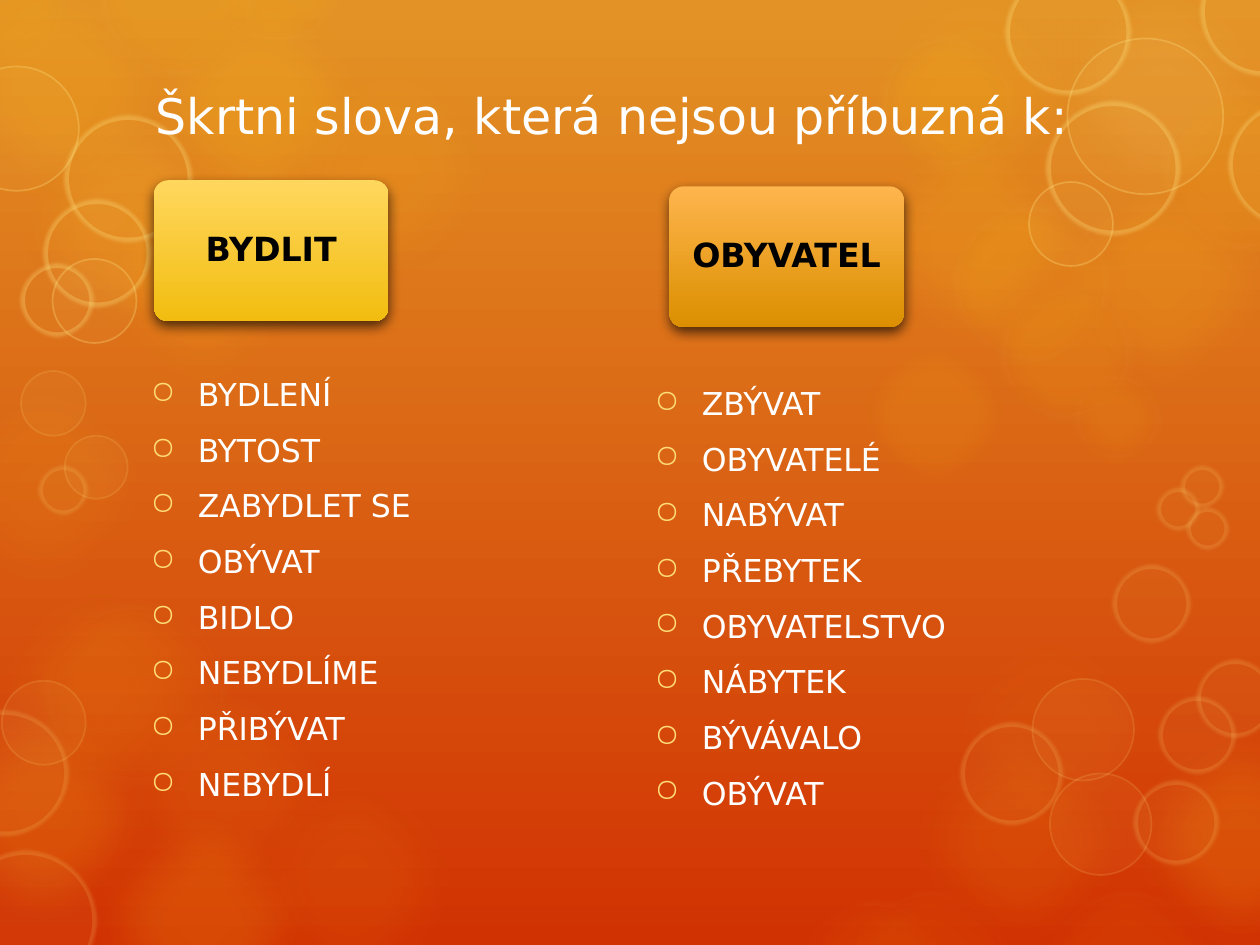
from lxml.etree import SubElement
from pptx import Presentation
from pptx.dml.color import RGBColor
from pptx.enum.shapes import MSO_SHAPE
from pptx.enum.text import MSO_ANCHOR, PP_ALIGN
from pptx.oxml.ns import qn
from pptx.util import Pt

FONT = "DejaVu Sans"
AMBER, CREAM, PALE = "FDC61B", "FEEBAE", "FFE281"


def color(hex_value):
    return RGBColor.from_string(hex_value)


def add_effect(shape, tag, **attributes):
    effects = shape._element.spPr.find(qn("a:effectLst"))
    return SubElement(effects, qn(tag), {name: str(value) for name, value in attributes.items()})


presentation = Presentation()
presentation.slide_width, presentation.slide_height = Pt(720), Pt(540)
slide = presentation.slides.add_slide(presentation.slide_layouts[6])
shapes = slide.shapes

background = slide.background.fill
background.gradient()
background.gradient_angle = 270
for stop, hex_value in zip(background.gradient_stops, ("E39325", "D13202")):
    stop.color.rgb = color(hex_value)

# Light circles: fill, fill opacity, line (colour, width, opacity), soft edge,
# then left, top and diameter of each circle
circle_groups = [
    (AMBER, 5, None, 25, [(525, 343, 150)]),
    (AMBER, 8, None, 25, [(-18, 318, 150), (55, 377, 150), (125, 429, 150), (-50, 203, 150)]),
    (AMBER, 10, None, 25, [(41, 86, 150), (148, 22, 150), (482, -21, 150), (508, 405, 150)]),
    (AMBER, 14, None, 25, [(-40, -23, 150)]),
    (AMBER, 15, None, 25, [(0, 52, 150), (590, 86, 150), (482, 62, 150)]),
    (AMBER, 16, None, 25, [(41, 451, 150), (634, 405, 150), (-50, 390, 150)]),
    (AMBER, 20, None, 25, [(73, -13, 150)]),
    (PALE, 10, None, 25, [(590, -23, 150)]),
    (AMBER, 10, None, 12.5, [(486, 189, 96)]),
    (AMBER, 10, (CREAM, 14, 6), 12.5, [
        (661, 47, 99), (500, 17, 82), (541, 114, 96), (568, 161, 82),
        (610, 210, 57), (54, -47, 94), (118, -54, 82), (-41, -41, 82)]),
    (AMBER, 6, (CREAM, 14, 4), 12.5, [
        (22, 341, 110), (454, 511, 91), (482, 505, 99), (595, 505, 99)]),
    (PALE, 5, (PALE, 1, 15), 0, [
        (1, 389, 48), (600, 442, 58), (590, 388, 58), (12, 212, 37), (37, 249, 36)]),
    (PALE, 5, (PALE, 5, 15), 2, [
        (-25, 486, 80), (-32, 406, 71), (549, 413, 58), (648, 446, 48),
        (636, 323, 44), (662, 398, 44), (684, 377, 44), (675, 266, 24),
        (661, 279, 24), (678, 290, 24), (22, 266, 28)]),
    (PALE, 5, (PALE, 1, 30), 0, [(-26, 38, 71), (30, 148, 48), (610, 22, 89), (588, 104, 48)]),
    (PALE, 5, (PALE, 5, 30), 2, [
        (37, 66, 72), (25, 114, 61), (12, 151, 41), (575, -17, 71),
        (686, -29, 72), (702, 58, 72), (598, 58, 76)]),
]
for fill_hex, opacity, line, soft_edge, circles in circle_groups:
    for left, top, size in circles:
        circle = shapes.add_shape(MSO_SHAPE.OVAL, Pt(left), Pt(top), Pt(size), Pt(size))
        circle.shadow.inherit = False
        circle.fill.solid()
        circle.fill.fore_color.rgb = color(fill_hex)
        opacities = [opacity]
        if line:
            line_hex, width, line_opacity = line
            circle.line.color.rgb = color(line_hex)
            circle.line.width = Pt(width)
            opacities.append(line_opacity)
        else:
            circle.line.fill.background()
        for solid, percent in zip(circle._element.spPr.iter(qn("a:srgbClr")), opacities):
            SubElement(solid, qn("a:alpha"), val=str(percent * 1000))
        if soft_edge:
            add_effect(circle, "a:softEdge", rad=Pt(soft_edge))

# Word cards
cards = [
    ("BYDLIT", 88, 103, ("FFD75D", "F2BD10")),
    ("OBYVATEL", 382.5, 106.5, ("FFB54D", "DB8F00")),
]
for word, left, top, gradient in cards:
    card = shapes.add_shape(MSO_SHAPE.ROUNDED_RECTANGLE, Pt(left), Pt(top), Pt(134), Pt(80.5))
    card.adjustments[0] = 0.1
    card.line.fill.background()
    card.fill.gradient()
    card.fill.gradient_angle = 270
    for stop, hex_value in zip(card.fill.gradient_stops, gradient):
        stop.color.rgb = color(hex_value)
    card.shadow.inherit = False
    shadow = add_effect(card, "a:outerShdw", blurRad=Pt(7), dist=Pt(3), dir=5400000, rotWithShape=0)
    black = SubElement(shadow, qn("a:srgbClr"), val="000000")
    SubElement(black, qn("a:alpha"), val="65000")
    card.text_frame.vertical_anchor = MSO_ANCHOR.MIDDLE
    paragraph = card.text_frame.paragraphs[0]
    paragraph.alignment = PP_ALIGN.CENTER
    paragraph.line_spacing = 0.9
    run = paragraph.add_run()
    run.text = word
    for name, value in {"name": FONT, "size": Pt(19), "bold": True}.items():
        setattr(run.font, name, value)
    run.font.color.rgb = color("000000")

# Title and word lists
text_boxes = [
    (82, 29, 561, 73, 28, False, ["Škrtni slova, která nejsou příbuzná k:"]),
    (79, 188, 274, 297, 18, True, [
        "BYDLENÍ", "BYTOST", "ZABYDLET SE", "OBÝVAT",
        "BIDLO", "NEBYDLÍME", "PŘIBÝVAT", "NEBYDLÍ"]),
    (367, 190, 274, 303, 18, True, [
        "ZBÝVAT", "OBYVATELÉ", "NABÝVAT", "PŘEBYTEK",
        "OBYVATELSTVO", "NÁBYTEK", "BÝVÁVALO", "OBÝVAT"]),
]
for left, top, width, height, size, bulleted, lines in text_boxes:
    box = shapes.add_textbox(Pt(left), Pt(top), Pt(width), Pt(height))
    frame = box.text_frame
    frame.word_wrap = True
    frame.vertical_anchor = MSO_ANCHOR.MIDDLE
    frame.text = "\n".join(lines)
    for paragraph in frame.paragraphs:
        font = paragraph.runs[0].font
        for name, value in {"name": FONT, "size": Pt(size)}.items():
            setattr(font, name, value)
        font.color.rgb = color("FFFFFF")
        if bulleted:
            paragraph.space_before = Pt(4.2)
            paragraph.space_after = Pt(6)
            properties = paragraph._p.get_or_add_pPr()
            properties.set("marL", str(Pt(27)))
            properties.set("indent", str(Pt(-27)))
            bullet_color = SubElement(properties, qn("a:buClr"))
            SubElement(bullet_color, qn("a:srgbClr"), val="FEDD78")
            SubElement(properties, qn("a:buChar"), char="○")

presentation.save("out.pptx")
